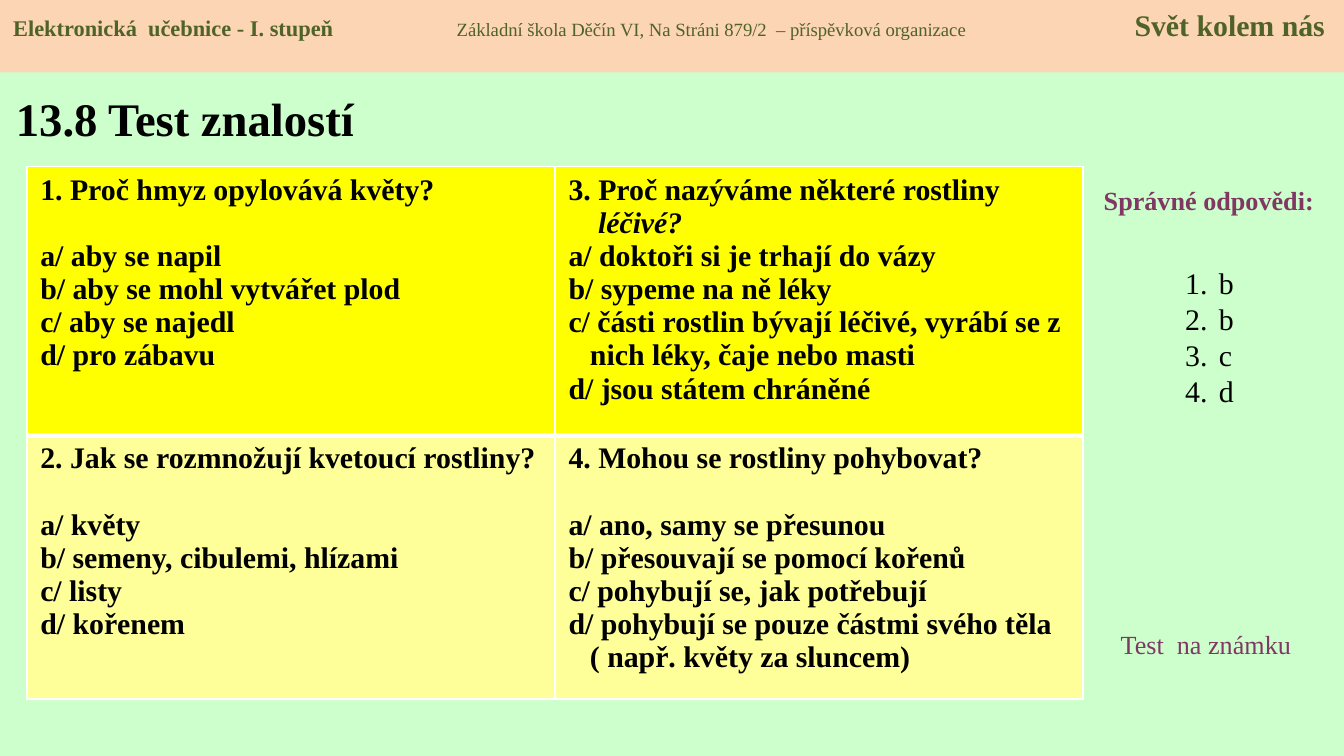
from dataclasses import dataclass

from lxml import etree
from pptx import Presentation
from pptx.dml.color import RGBColor
from pptx.enum.shapes import MSO_SHAPE
from pptx.enum.text import MSO_ANCHOR, PP_ALIGN
from pptx.oxml.ns import qn
from pptx.util import Inches, Pt

RECT = MSO_SHAPE.RECTANGLE
TOP, MIDDLE = MSO_ANCHOR.TOP, MSO_ANCHOR.MIDDLE
LEFT, CENTER = PP_ALIGN.LEFT, PP_ALIGN.CENTER


@dataclass(frozen=True)
class Theme:
    font: str = "Times New Roman"
    back: str = "CCFFCC"
    band: str = "FCD5B5"
    green: str = "4F6228"
    plum: str = "813763"
    ink: str = "000000"
    line: str = "FFFFFF"
    rows: tuple = ("FFFF00", "FFFF99")
    title: int = 25
    body: int = 16
    note: int = 14
    head: int = 12
    small: int = 10


# Each row of questions: (prompt, answers); a tuple answer is (text, left, first indent)
TEST = [
    [
        ("1. Proč hmyz opylovává květy?",
         ["a/ aby se napil", "b/ aby se mohl vytvářet plod",
          "c/ aby se najedl", "d/ pro zábavu"]),
        ("3. Proč nazýváme některé rostliny",
         [("léčivé?", 0.22, 0),
          "a/ doktoři si je trhají do vázy", "b/ sypeme na ně léky",
          ("c/ části rostlin bývají léčivé, vyrábí se z nich léky, čaje nebo masti",
           0.16, -0.16),
          "d/ jsou státem chráněné"]),
    ],
    [
        ("2. Jak se rozmnožují kvetoucí rostliny?",
         ["a/ květy", "b/ semeny, cibulemi, hlízami", "c/ listy", "d/ kořenem"]),
        ("4. Mohou se rostliny pohybovat?",
         ["a/ ano, samy se přesunou", "b/ přesouvají se pomocí kořenů",
          "c/ pohybují se, jak potřebují", "d/ pohybují se pouze částmi svého těla",
          ("( např. květy za sluncem)", 0.16, 0)]),
    ],
]


class Deck:
    """Holds the theme and the slide being drawn."""

    def __init__(self, theme, slide):
        self.theme = theme
        self.slide = slide
        fill = slide.background.fill
        fill.solid()
        fill.fore_color.rgb = RGBColor.from_string(theme.back)

    def style(self, run, size, color, bold=False):
        font = run.font
        font.name, font.size, font.bold = self.theme.font, Pt(size), bold
        font.color.rgb = RGBColor.from_string(color)

    def indent(self, para, left, first):
        props = para._p.get_or_add_pPr()
        props.set("marL", str(Inches(left)))
        props.set("indent", str(Inches(first)))
        return props

    def text(self, box, words, size, color, bold=False, align=LEFT, anchor=TOP):
        shape = self.slide.shapes.add_textbox(*map(Inches, box))
        frame = shape.text_frame
        frame.word_wrap = True
        frame.vertical_anchor = anchor
        frame.text = words
        for para in frame.paragraphs:
            para.alignment = align
            for run in para.runs:
                self.style(run, size, color, bold)
        return frame

    def band(self, box, parts, tabs):
        """Draw a filled strip whose text parts are set apart by tab stops."""
        shape = self.slide.shapes.add_shape(RECT, *map(Inches, box))
        shape.shadow.inherit = False
        shape.fill.solid()
        shape.fill.fore_color.rgb = RGBColor.from_string(self.theme.band)
        shape.line.fill.background()
        frame = shape.text_frame
        frame.word_wrap = True
        frame.vertical_anchor = TOP
        para = frame.paragraphs[0]
        para.alignment = LEFT
        stops = etree.SubElement(para._p.get_or_add_pPr(), qn("a:tabLst"))
        for place, side in tabs:
            etree.SubElement(stops, qn("a:tab"), pos=str(Inches(place)), algn=side)
        for words, size, bold in parts:
            run = para.add_run()
            run.text = words
            self.style(run, size, self.theme.green, bold)

    def listing(self, box, items, top):
        """Write a numbered list that starts below the given top inset."""
        theme = self.theme
        frame = self.text(box, "\n".join(items), theme.body, theme.ink)
        frame.margin_top = Inches(top)
        for para in frame.paragraphs:
            props = self.indent(para, 0.25, -0.25)
            etree.SubElement(props, qn("a:buFont"), typeface=theme.font)
            etree.SubElement(props, qn("a:buAutoNum"), type="arabicPeriod")

    def border(self, cell, widths):
        """Draw the cell's sides; widths maps a side letter to points."""
        props = cell._tc.get_or_add_tcPr()
        for place, (side, width) in enumerate(widths.items()):
            edge = etree.Element(qn("a:ln" + side), w=str(Pt(width)))
            paint = etree.SubElement(edge, qn("a:solidFill"))
            etree.SubElement(paint, qn("a:srgbClr"), val=self.theme.line)
            props.insert(place, edge)

    def question(self, cell, prompt, answers):
        theme = self.theme
        frame = cell.text_frame
        frame.text = prompt
        first = frame.paragraphs[0]
        if isinstance(answers[0], str):
            first.space_after = Pt(17.7)
        for answer in answers:
            para = frame.add_paragraph()
            if isinstance(answer, str):
                para.text = answer
            else:
                para.text = answer[0]
                self.indent(para, *answer[1:])
        for para in frame.paragraphs:
            for run in para.runs:
                self.style(run, theme.body, theme.ink, True)
                run.font.italic = run.text == "léčivé?"

    def table(self, box, rows, heights):
        shape = self.slide.shapes.add_table(len(rows), len(rows[0]), *map(Inches, box))
        grid = shape.table
        grid.first_row = grid.horz_banding = False
        for r, row in enumerate(rows):
            grid.rows[r].height = Inches(heights[r])
            for c, (prompt, answers) in enumerate(row):
                cell = grid.cell(r, c)
                cell.fill.solid()
                cell.fill.fore_color.rgb = RGBColor.from_string(self.theme.rows[r])
                upper, lower = (1, 3) if r == 0 else (3, 1)
                self.border(cell, {"L": 1, "R": 1, "T": upper, "B": lower})
                self.question(cell, prompt, answers)


def main():
    show = Presentation()
    show.slide_width = Inches(10)
    show.slide_height = show.slide_width * 9 // 16
    theme = Theme()
    deck = Deck(theme, show.slides.add_slide(show.slide_layouts[6]))

    deck.text((0.02, 0.55, 3.19, 0.65), "13.8 Test znalostí",
              theme.title, theme.ink, bold=True, anchor=MIDDLE)
    deck.text((8.05, 1.32, 1.89, 0.34), "Správné odpovědi:",
              theme.note, theme.plum, bold=True, align=CENTER)
    deck.table((0.2, 1.24, 7.86, 3.96), TEST, (2, 1.96))
    deck.listing((8.72, 1.65, 0.55, 1.99), "bbcd", 0.32)
    deck.text((8.24, 4.63, 1.57, 0.34), "Test  na známku", theme.note, theme.plum)
    deck.band((0, 0, 10, 0.54), [
        ("Elektronická  učebnice - I. stupeň\t", theme.head, True),
        ("Základní škola Děčín VI, Na Stráni 879/2  – příspěvková organizace\t",
         theme.small, False),
        ("Svět kolem nás", theme.body, True),
    ], [(3.3, "l"), (9.76, "r")])
    show.save("out.pptx")


if __name__ == "__main__":
    main()
